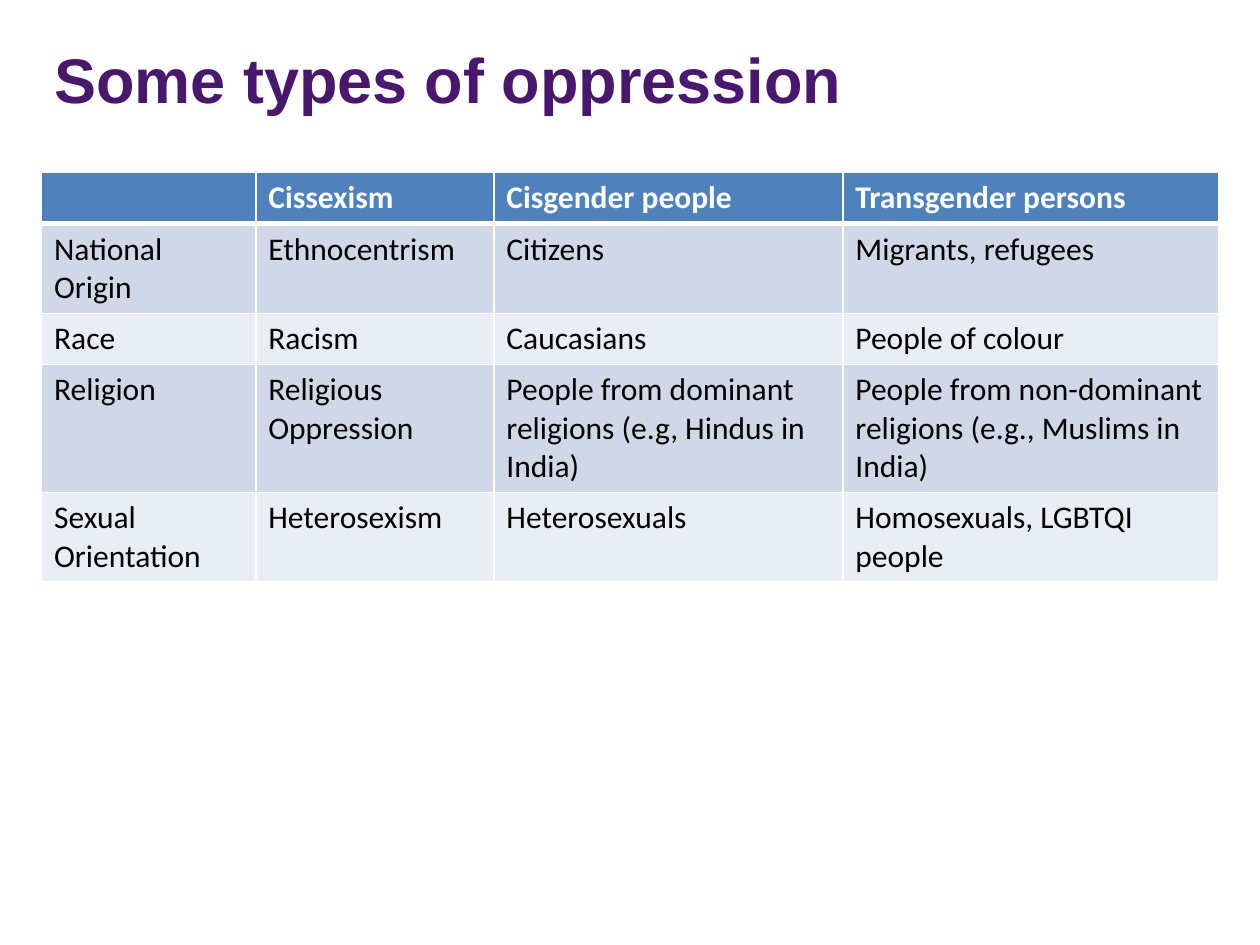
from lxml.etree import SubElement as Sub
from pptx import Presentation as Deck
from pptx.dml.color import RGBColor as RGB
from pptx.enum.text import MSO_ANCHOR as Anchor, PP_ALIGN as Align
from pptx.oxml.ns import qn
from pptx.util import Inches, Pt

PURPLE = RGB(0x49, 0x17, 0x6D)
BLUE = RGB(0x4F, 0x81, 0xBD)
BANDS = RGB(0xD0, 0xD8, 0xE8), RGB(0xE9, 0xED, 0xF4)
WHITE = RGB(0xFF, 0xFF, 0xFF)
BLACK = RGB(0, 0, 0)

TITLE = {"name": "Arial", "size": Pt(36), "bold": True}
HEAD = {"name": "Calibri", "size": Pt(18), "bold": True}
BODY = {**HEAD, "bold": False}

COLS = 1.7, 1.89, 2.77, 2.98
LINE, PAD = 0.3, 0.1  # height of a text line, cell padding
ROWS = [
    (1, ("", "Cissexism", "Cisgender people", "Transgender persons")),
    (2, ("National Origin", "Ethnocentrism", "Citizens",
         "Migrants, refugees")),
    (1, ("Race", "Racism", "Caucasians", "People of colour")),
    (3, ("Religion", "Religious Oppression",
         "People from dominant religions (e.g, Hindus in India)",
         "People from non-dominant religions (e.g., Muslims in India)")),
    (2, ("Sexual Orientation", "Heterosexism", "Heterosexuals",
         "Homosexuals, LGBTQI people")),
]


def style(font, look, color):
    for key, value in look.items():
        setattr(font, key, value)
    font.color.rgb = color


def edge(cell, low):
    """Draw white cell borders; low is the bottom width in points."""
    props = cell._tc.get_or_add_tcPr()
    for side, width in zip("LRTB", (1, 1, 1, low)):
        line = Sub(props, qn(f"a:ln{side}"), w=str(Pt(width)))
        fill = Sub(line, qn("a:solidFill"))
        Sub(fill, qn("a:srgbClr"), val=str(WHITE))


def add_title(slide, text, box):
    shape = slide.shapes.title
    shape.left, shape.top, shape.width, shape.height = map(Inches, box)
    frame = shape.text_frame
    frame.text = text
    frame.vertical_anchor = Anchor.MIDDLE
    para = frame.paragraphs[0]
    para.alignment = Align.LEFT
    style(para.runs[0].font, TITLE, PURPLE)


def add_grid(slide, left, top):
    highs = [LINE * count + PAD for count, _ in ROWS]
    size = left, top, sum(COLS), sum(highs)
    table = slide.shapes.add_table(
        len(ROWS), len(COLS), *map(Inches, size)).table
    for col, width in zip(table.columns, COLS):
        col.width = Inches(width)
    for i, (row, high) in enumerate(zip(table.rows, highs)):
        row.height = Inches(high)
        head = i == 0
        for cell, text in zip(row.cells, ROWS[i][1]):
            edge(cell, 3 if head else 1)
            cell.fill.solid()
            cell.fill.fore_color.rgb = BLUE if head else BANDS[(i - 1) % 2]
            cell.text = text
            style(cell.text_frame.paragraphs[0].font,
                  HEAD if head else BODY, WHITE if head else BLACK)
            for run in cell.text_frame.paragraphs[0].runs:
                style(run.font, HEAD if head else BODY,
                      WHITE if head else BLACK)


def main():
    deck = Deck()
    deck.slide_width, deck.slide_height = Inches(10), Inches(7.5)
    slide = deck.slides.add_slide(deck.slide_layouts[5])
    add_title(slide, "Some types of oppression", (0.33, 0, 8.67, 1.25))
    add_grid(slide, 0.33, 1.37)
    deck.save("out.pptx")


if __name__ == "__main__":
    main()
